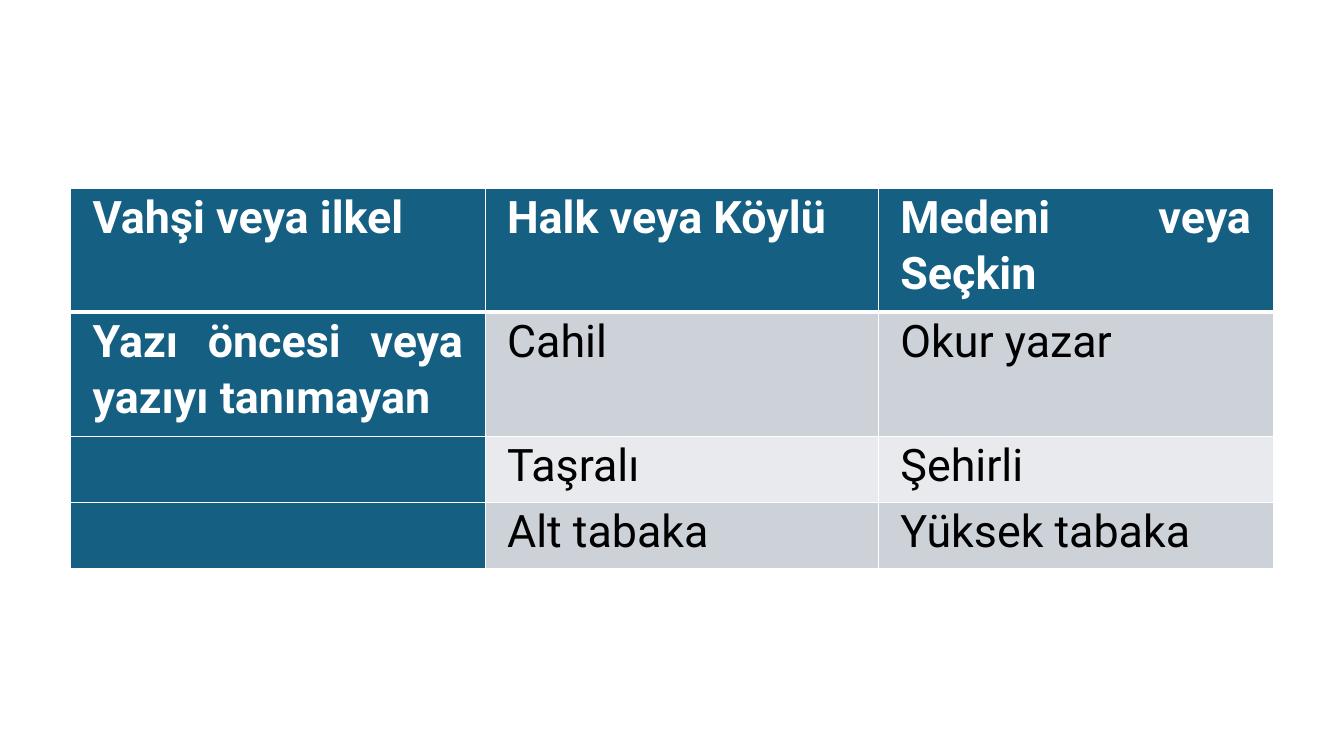
"""Build a slide with a table comparing savage, folk and civilised groups."""
from dataclasses import dataclass

from lxml import etree
from pptx import Presentation
from pptx.dml.color import RGBColor
from pptx.enum.text import MSO_ANCHOR, PP_ALIGN
from pptx.oxml.ns import qn
from pptx.util import Pt

JUSTIFY = PP_ALIGN.JUSTIFY
TOP = MSO_ANCHOR.TOP


@dataclass(frozen=True)
class Theme:
    font: str = "Roboto"
    size: int = 32
    heading_fill: str = "156082"
    band_fills: tuple = ("E8EAED", "CCD2D8")
    heading_text: str = "FFFFFF"
    body_text: str = "000000"
    border: str = "FFFFFF"
    thin: int = 1
    thick: int = 3


def add_border(cell, side, width):
    properties = cell._tc.get_or_add_tcPr()
    line = etree.SubElement(properties, qn(f"a:ln{side}"), w=str(Pt(width)))
    fill = etree.SubElement(line, qn("a:solidFill"))
    etree.SubElement(fill, qn("a:srgbClr"), val=theme.border)


theme = Theme()
ROWS = [
    ("Vahşi veya ilkel", "Halk veya Köylü", "Medeni veya Seçkin"),
    ("Yazı öncesi veya yazıyı tanımayan", "Cahil", "Okur yazar"),
    ("", "Taşralı", "Şehirli"),
    ("", "Alt tabaka", "Yüksek tabaka"),
]
COLUMN_WIDTHS = (296, 281, 281.8)
ROW_HEIGHTS = (88.6, 88.6, 47.2, 47.2)

deck = Presentation()
deck.slide_width, deck.slide_height = Pt(960), Pt(540)
page = deck.slides.add_slide(deck.slide_layouts[6])

frame = page.shapes.add_table(
    len(ROWS), len(COLUMN_WIDTHS), Pt(50.6), Pt(134.5),
    Pt(sum(COLUMN_WIDTHS)), Pt(sum(ROW_HEIGHTS)))
table = frame.table
table.first_col = True
for column, width in zip(table.columns, COLUMN_WIDTHS):
    column.width = Pt(width)
for row, height in zip(table.rows, ROW_HEIGHTS):
    row.height = Pt(height)

for row_index, words in enumerate(ROWS):
    for column_index, text in enumerate(words):
        cell = table.cell(row_index, column_index)
        is_heading = row_index == 0 or column_index == 0
        cell.margin_left = cell.margin_right = Pt(15.6)
        cell.margin_top = cell.margin_bottom = 0
        cell.vertical_anchor = TOP

        add_border(cell, "L", theme.thin)
        add_border(cell, "R", theme.thin)
        add_border(cell, "T", theme.thick if row_index == 1 else theme.thin)
        add_border(cell, "B", theme.thick if row_index == 0 else theme.thin)
        cell.fill.solid()
        cell.fill.fore_color.rgb = RGBColor.from_string(
            theme.heading_fill if is_heading else theme.band_fills[row_index % 2])

        cell.text_frame.text = text
        para = cell.text_frame.paragraphs[0]
        para.alignment = JUSTIFY
        para.line_spacing = 1.07
        para.space_after = Pt(8)
        for span in para.runs:
            span.font.name = theme.font
            span.font.size = Pt(theme.size)
            span.font.bold = is_heading
            span.font.color.rgb = RGBColor.from_string(
                theme.heading_text if is_heading else theme.body_text)

deck.save("out.pptx")
